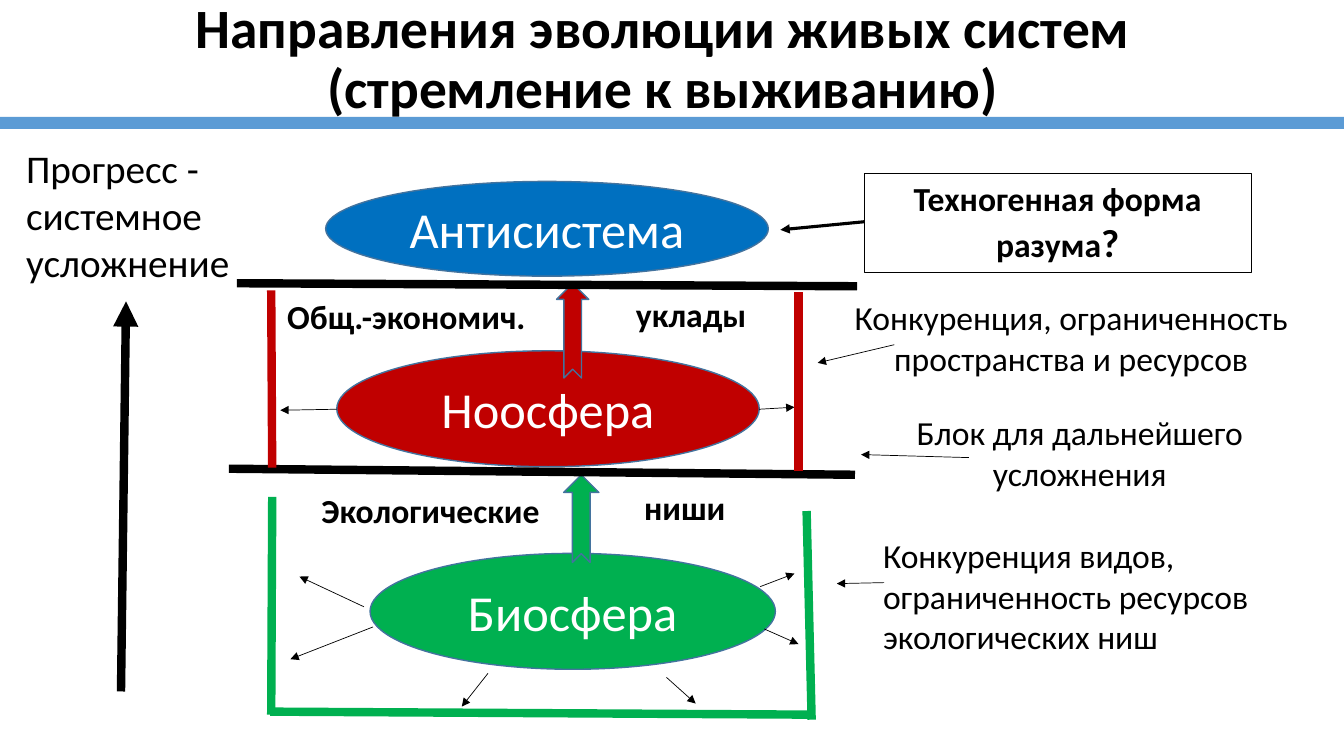
from dataclasses import dataclass

from lxml import etree
from pptx import Presentation
from pptx import util as u
from pptx.dml.color import RGBColor
from pptx.enum import shapes, text
from pptx.oxml.ns import qn

SHAPE = shapes.MSO_SHAPE
ALIGN = text.PP_ALIGN
ANCHOR = text.MSO_ANCHOR


@dataclass(frozen=True)
class Theme:
    font: str = "Calibri"
    ink: str = "000000"
    paper: str = "FFFFFF"
    band: str = "5B9BD5"
    edge: str = "43739E"
    bio: str = "00B050"
    noo: str = "C00000"
    anti: str = "0070C0"
    title: float = 39.6
    sphere: float = 36
    lead: float = 28
    note: float = 24
    thick: float = 6
    thin: float = 0.5


T = Theme()


def rgb(code):
    return RGBColor.from_string(code)


def style(para, size, color=T.ink, bold=False, align=ALIGN.LEFT):
    para.alignment = align
    font = para.font
    font.name, font.size, font.bold = T.font, u.Pt(size), bold
    font.color.rgb = rgb(color)


@dataclass
class Region:
    """A box on the slide; its parts are placed from its top left corner."""
    slide: object
    left: float
    top: float
    width: float
    height: float

    def place(self, x, y, w, h):
        return [u.Inches(v) for v in (self.left + x, self.top + y, w, h)]

    def line(self, start, end, color=T.ink, width=T.thin, arrow=False):
        ends = [u.Inches(v) for x, y in (start, end)
                for v in (self.left + x, self.top + y)]
        line = self.slide.shapes.add_connector(
            shapes.MSO_CONNECTOR.STRAIGHT, *ends)
        line.line.color.rgb = rgb(color)
        line.line.width = u.Pt(width)
        if arrow:
            tail = etree.SubElement(line.line._get_or_add_ln(), qn("a:tailEnd"))
            tail.set("type", "triangle")
        etree.SubElement(line._element.spPr, qn("a:effectLst"))

    def rays(self, pairs):
        for start, end in pairs:
            self.line(start, end, arrow=True)

    def label(self, words, x, y, w, h, size=T.note, **looks):
        box = self.slide.shapes.add_textbox(*self.place(x, y, w, h))
        box.text_frame.word_wrap = True
        box.text_frame.text = words
        style(box.text_frame.paragraphs[0], size, **looks)

    def shape(self, kind, x, y, w, h, fill=None, edge=None, width=1):
        item = self.slide.shapes.add_shape(kind, *self.place(x, y, w, h))
        item.shadow.inherit = False
        if fill:
            item.fill.solid()
            item.fill.fore_color.rgb = rgb(fill)
        else:
            item.fill.background()
        if edge:
            item.line.color.rgb = rgb(edge)
            item.line.width = u.Pt(width)
        else:
            item.line.fill.background()
        return item

    def sphere(self, name, fill):
        """An ellipse that fills the region."""
        item = self.shape(SHAPE.OVAL, 0, 0, self.width, self.height,
                          fill, T.edge)
        frame = item.text_frame
        frame.text = name
        frame.vertical_anchor = ANCHOR.MIDDLE
        style(frame.paragraphs[0], T.sphere, T.paper, align=ALIGN.CENTER)

    def rise(self, x, y, w, h, fill, shaft=0.5):
        """A notched arrow, w long, turned to point upwards."""
        item = self.shape(SHAPE.NOTCHED_RIGHT_ARROW, x, y, w, h, fill, T.edge)
        item.adjustments[0] = shaft
        item.rotation = 270


def header(slide, left, top, width, height):
    area = Region(slide, left, top, width, height)
    title = slide.shapes.title
    title.left, title.top, title.width, title.height = area.place(
        0.27, 0.14, 12.61, 0.92)
    frame = title.text_frame
    frame.text = "Направления эволюции живых систем (стремление к выживанию)"
    frame.word_wrap = True
    frame.auto_size = text.MSO_AUTO_SIZE.NONE
    frame.vertical_anchor = ANCHOR.MIDDLE
    para = frame.paragraphs[0]
    para.line_spacing = 0.9
    style(para, T.title, bold=True, align=ALIGN.CENTER)
    area.shape(SHAPE.RECTANGLE, 0, height - 0.12, width, 0.12, T.band)


def progress(slide, left, top, width, height):
    area = Region(slide, left, top, width, height)
    area.label("Прогресс - системное усложнение", 0, 0, width, 1.51, T.lead)
    area.line((1.04, height), (1.09, 1.61), width=T.thick, arrow=True)


def biosphere(slide, left, top, width, height):
    area = Region(slide, left, top, width, height)
    area.sphere("Биосфера", T.bio)
    area.rise(1.66, -0.52, 0.87, 0.35, T.bio)
    # Walls and floor of the ecological niche
    for start, end in (((-0.97, -0.56), (-0.98, 1.6)),
                       ((4.33, -0.42), (4.38, 1.65)),
                       ((-0.99, 1.57), (4.37, 1.6))):
        area.line(start, end, T.bio, T.thick)
    area.rays([((-0.06, 0.53), (-0.7, 0.23)), ((0.03, 0.73), (-0.79, 1.05)),
               ((3.87, 0.33), (4.21, 0.2)), ((3.91, 0.75), (4.25, 0.9)),
               ((1.17, 1.19), (0.91, 1.52)), ((2.94, 1.23), (3.23, 1.49))])
    area.label("Экологические", -0.58, -0.68, 2.45, 0.5, bold=True)
    area.label("ниши", 2.62, -0.71, 1.1, 0.5, bold=True)


def noosphere(slide, left, top, width, height):
    area = Region(slide, left, top, width, height)
    area.sphere("Ноосфера", T.noo)
    area.line((-1.07, 1.17), (5.14, 1.23), width=T.thick)
    area.rise(1.87, -0.36, 0.94, 0.32, T.noo, 0.547)
    area.rays([((width, 0.58), (4.54, 0.56)), ((0, 0.58), (-0.56, 0.59))])
    # Walls
    area.line((4.58, -0.58), (4.58, 1.19), T.noo, T.thick)
    area.line((-0.65, -0.6), (-0.64, 1.16), T.noo, T.thick)
    area.label("Общ.-экономич.", -0.59, -0.59, 2.64, 0.5, bold=True)
    area.label("уклады", 2.55, -0.61, 1.61, 0.5, bold=True, align=ALIGN.RIGHT)


def antisystem(slide, left, top, width, height):
    area = Region(slide, left, top, width, height)
    area.line((-0.88, 1.01), (5.27, 1.04), width=T.thick)
    area.sphere("Антисистема", T.anti)


def notes(slide, left, top, width, height):
    area = Region(slide, left, top, width, height)
    # Framed question
    box = area.shape(SHAPE.RECTANGLE, 0.2, 0, 3.84, 0.98,
                     edge=T.ink, width=0.75)
    frame = box.text_frame
    frame.vertical_anchor = ANCHOR.TOP
    para = frame.paragraphs[0]
    style(para, T.note, bold=True, align=ALIGN.CENTER)
    para.add_run().text = "Техногенная форма разума"
    mark = para.add_run()
    mark.text = "?"
    mark.font.size = u.Pt(T.lead)
    area.line((0.2, 0.48), (-0.63, 0.56), width=2.25, arrow=True)
    # Remarks
    area.label("Конкуренция, ограниченность пространства и ресурсов",
               0, 1.18, width, 0.91, align=ALIGN.CENTER)
    area.label("Блок для дальнейшего усложнения",
               0.59, 2.32, 3.5, 0.91, align=ALIGN.CENTER)
    area.label("Конкуренция видов, ограниченность ресурсов экологических ниш",
               0.29, 3.54, 3.86, 1.31)
    area.rays([((0.5, 1.7), (-0.26, 1.88)), ((1.24, 2.82), (0.17, 2.79)),
               ((0.4, 4.06), (-0.07, 4.07))])


def main():
    deck = Presentation()
    deck.slide_width, deck.slide_height = u.Inches(13.33), u.Inches(7.5)
    slide = deck.slides.add_slide(deck.slide_layouts.get_by_name("Title Only"))
    header(slide, 0, 0, 13.33, 1.28)
    progress(slide, 0.16, 1.38, 2.33, 5.48)
    biosphere(slide, 3.67, 5.49, 4.02, 1.15)
    noosphere(slide, 3.34, 3.48, 4.19, 1.15)
    antisystem(slide, 3.23, 1.8, 4.39, 0.94)
    notes(slide, 8.37, 1.72, 4.51, 4.85)
    deck.save("out.pptx")


if __name__ == "__main__":
    main()
